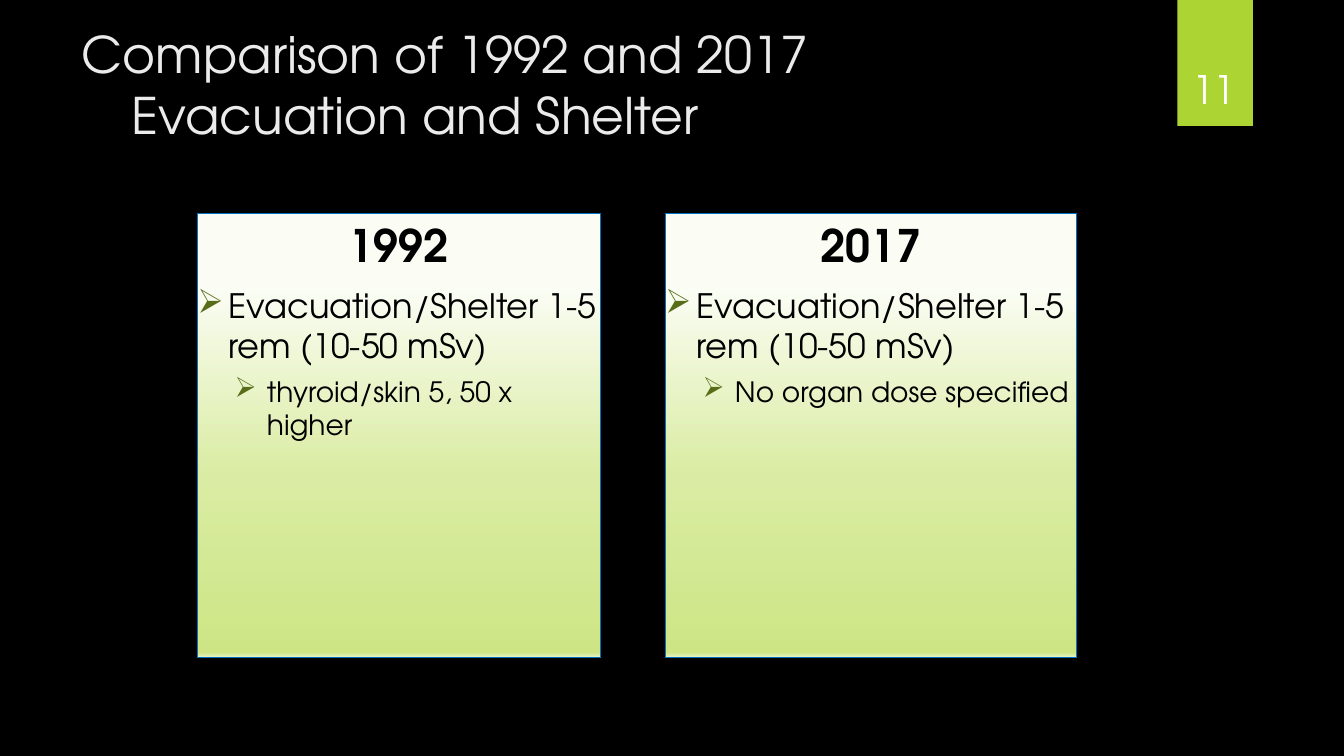
from lxml import etree
from pptx import Presentation
from pptx.dml.color import RGBColor
from pptx.enum import shapes, text
from pptx.oxml import parse_xml
from pptx.oxml.ns import qn
from pptx.util import Pt

FACE = "TeX Gyre Adventor"
NS = 'xmlns:a="http://schemas.openxmlformats.org/drawingml/2006/main"'
STOPS = [(16, "FBFDF5"), (59, "DAECA3"), (99, "CDE585"), (100, "E6F2C2")]


def color(code):
    return RGBColor.from_string(code)


def style(para, size, code, bold=False):
    font = para.font
    font.name, font.size, font.bold = FACE, Pt(size), bold
    font.color.rgb = color(code)


def rect(slide, left, top, width, height):
    box = slide.shapes.add_shape(shapes.MSO_SHAPE.RECTANGLE, Pt(left),
                                 Pt(top), Pt(width), Pt(height))
    box.shadow.inherit = False
    return box


def label(slide, left, top, width, height, words, size, code, align):
    """Add a bottom-anchored text box and return its paragraph."""
    frame = slide.shapes.add_textbox(Pt(left), Pt(top), Pt(width),
                                     Pt(height)).text_frame
    frame.word_wrap = True
    frame.vertical_anchor = text.MSO_ANCHOR.BOTTOM
    para = frame.paragraphs[0]
    para.text = words
    para.alignment = align
    # Tab stop for the indented second line
    if "\t" in words:
        tabs = etree.SubElement(para._p.get_or_add_pPr(), qn("a:tabLst"))
        etree.SubElement(tabs, qn("a:tab"), pos=str(Pt(36)), algn="l")
    style(para, size, code)


def shade(box):
    """Fill a box with the green gradient, top to bottom."""
    stops = "".join(f'<a:gs pos="{pos * 1000}"><a:srgbClr val="{code}"/></a:gs>'
                    for pos, code in STOPS)
    grad = parse_xml(f'<a:gradFill {NS} rotWithShape="1"><a:gsLst>{stops}'
                     '</a:gsLst><a:lin ang="5400000" scaled="0"/></a:gradFill>')
    box._element.spPr.find(qn("a:prstGeom")).addnext(grad)


def bullet(frame, words, level, size, left, hang, before):
    para = frame.add_paragraph()
    para.text = words
    para.level = level
    para.alignment = text.PP_ALIGN.LEFT
    para.space_before = Pt(before)
    props = para._p.get_or_add_pPr()
    props.set("marL", str(Pt(left)))
    props.set("indent", str(Pt(-hang)))
    tint = etree.SubElement(props, qn("a:buClr"))
    etree.SubElement(tint, qn("a:srgbClr"), val="576D17")
    etree.SubElement(props, qn("a:buChar"), char="➢")
    style(para, size, "000000")


def panel(slide, left, width, year, dose, organ):
    box = rect(slide, left, 152.6, width, 316.8)
    shade(box)
    box.line.color.rgb = color("0070C0")
    box.line.width = Pt(0.75)
    frame = box.text_frame
    frame.word_wrap = True
    frame.vertical_anchor = text.MSO_ANCHOR.TOP
    frame.margin_left = frame.margin_right = 0
    frame.margin_top = frame.margin_bottom = Pt(3)
    # Year heading, then the two bullet levels
    head = frame.paragraphs[0]
    head.text = year
    head.alignment = text.PP_ALIGN.CENTER
    style(head, 32, "000000", True)
    bullet(frame, dose, 0, 24, 22.3, 22.3, 9.6)
    bullet(frame, organ, 1, 20, 49.7, 23, 6)


def main():
    deck = Presentation()
    deck.slide_width, deck.slide_height = Pt(960), Pt(540)
    slide = deck.slides.add_slide(deck.slide_layouts[6])
    fill = slide.background.fill
    fill.solid()
    fill.fore_color.rgb = color("000000")

    # Page number tab
    tab = rect(slide, 841, 0, 54, 90)
    tab.fill.solid()
    tab.fill.fore_color.rgb = color("ACD433")
    tab.line.fill.background()

    # Comparison panels
    dose = "Evacuation/Shelter 1-5 rem (10-50 mSv)"
    panel(slide, 141, 288, "1992", dose, "thyroid/skin 5, 50 x higher")
    panel(slide, 475.2, 294, "2017", dose, "No organ dose specified")

    # Title and page number
    label(slide, 51, 23, 749.5, 83.5,
          "Comparison of 1992 and 2017\v\tEvacuation and Shelter",
          36, "EBEBEB", text.PP_ALIGN.LEFT)
    label(slide, 834, 23, 66, 60.5, "11", 28, "FFFFFF", text.PP_ALIGN.CENTER)
    deck.save("out.pptx")


if __name__ == "__main__":
    main()
